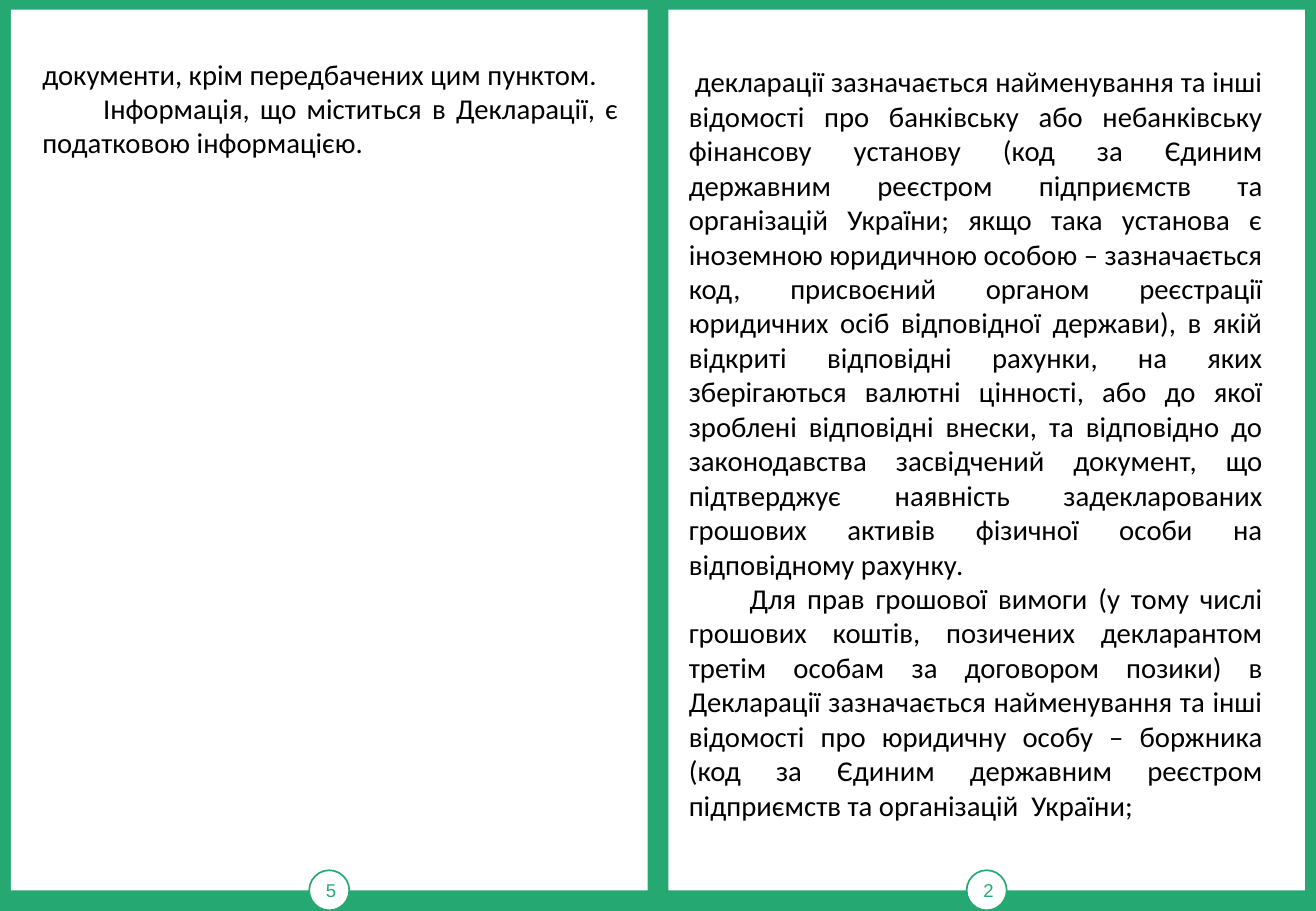
from pptx import Presentation
from pptx.dml.color import RGBColor
from pptx.enum.shapes import MSO_SHAPE
from pptx.enum.text import MSO_ANCHOR, PP_ALIGN
from pptx.util import Inches, Pt

RECTANGLE, OVAL = MSO_SHAPE.RECTANGLE, MSO_SHAPE.OVAL
TOP, MIDDLE = MSO_ANCHOR.TOP, MSO_ANCHOR.MIDDLE
CENTER, JUSTIFY = PP_ALIGN.CENTER, PP_ALIGN.JUSTIFY

GREEN, WHITE, BLACK = "25A872", "FFFFFF", "000000"
PAGE_TOP, PAGE_WIDTH, PAGE_HEIGHT = 0.08, 5.24, 7.25
BADGE_SIZE = 0.33

# Each paragraph is a first-line indent in inches and its text
LEFT_TEXT = [
    (0, "документи, крім передбачених цим пунктом."),
    (0.5, "Інформація, що міститься в Декларації, є податковою інформацією."),
]
RIGHT_TEXT = [
    (0.05, "декларації зазначається найменування та інші відомості про банківську "
     "або небанківську фінансову установу (код за Єдиним державним реєстром "
     "підприємств та організацій України; якщо така установа є іноземною "
     "юридичною особою – зазначається код, присвоєний органом реєстрації "
     "юридичних осіб відповідної держави), в якій відкриті відповідні рахунки, "
     "на яких зберігаються валютні цінності, або до якої зроблені відповідні "
     "внески, та відповідно до законодавства засвідчений документ, що "
     "підтверджує наявність задекларованих грошових активів фізичної особи на "
     "відповідному рахунку."),
    (0.5, "Для прав грошової вимоги (у тому числі грошових коштів, позичених "
     "декларантом третім особам за договором позики) в Декларації зазначається "
     "найменування та інші відомості про юридичну особу – боржника (код за "
     "Єдиним державним реєстром підприємств та організацій  України;"),
]


def color(value):
    return RGBColor.from_string(value)


def write(paragraph, text, *, size, font, fill, align, indent=0):
    paragraph.alignment = align
    if indent:
        paragraph._p.get_or_add_pPr().set("indent", str(Inches(indent)))
    run = paragraph.add_run()
    run.text = text
    run.font.size = Pt(size)
    run.font.name = font
    run.font.color.rgb = color(fill)


def add_white_shape(slide, kind, left, top, width, height):
    shape = slide.shapes.add_shape(
        kind, Inches(left), Inches(top), Inches(width), Inches(height))
    shape.shadow.inherit = False
    shape.fill.solid()
    shape.fill.fore_color.rgb = color(WHITE)
    shape.line.fill.background()
    return shape


def add_page(slide, left, number):
    # White sheet
    add_white_shape(slide, RECTANGLE, left, PAGE_TOP, PAGE_WIDTH, PAGE_HEIGHT)

    # Number badge centred on the bottom edge
    badge = add_white_shape(
        slide, OVAL, left + (PAGE_WIDTH - BADGE_SIZE) / 2,
        PAGE_TOP + PAGE_HEIGHT - BADGE_SIZE / 2, BADGE_SIZE, BADGE_SIZE)
    badge.line.color.rgb = color(GREEN)
    badge.line.width = Pt(1)
    frame = badge.text_frame
    frame.word_wrap = False
    frame.vertical_anchor = MIDDLE
    frame.margin_left = Inches(0.03)
    frame.margin_right = frame.margin_top = frame.margin_bottom = 0
    write(frame.paragraphs[0], number, size=11, font="Arial", fill=GREEN, align=CENTER)


def add_body(slide, box, paragraphs, anchor):
    frame = slide.shapes.add_textbox(*map(Inches, box)).text_frame
    frame.word_wrap = True
    frame.vertical_anchor = anchor
    for index, (indent, text) in enumerate(paragraphs):
        paragraph = frame.add_paragraph() if index else frame.paragraphs[0]
        write(paragraph, text, size=17, font="Calibri", fill=BLACK,
              align=JUSTIFY, indent=indent)


def main():
    presentation = Presentation()
    presentation.slide_width = Inches(10.83)
    presentation.slide_height = Inches(7.5)
    slide = presentation.slides.add_slide(presentation.slide_layouts[6])
    slide.background.fill.solid()
    slide.background.fill.fore_color.rgb = color(GREEN)

    # Two facing pages, then their texts
    add_page(slide, 0.09, "5")
    add_page(slide, 5.5, "2")
    add_body(slide, (5.57, 0.48, 4.92, 6.59), RIGHT_TEXT, TOP)
    add_body(slide, (0.25, 0.41, 4.94, 0.96), LEFT_TEXT, MIDDLE)
    presentation.save("out.pptx")


if __name__ == "__main__":
    main()
